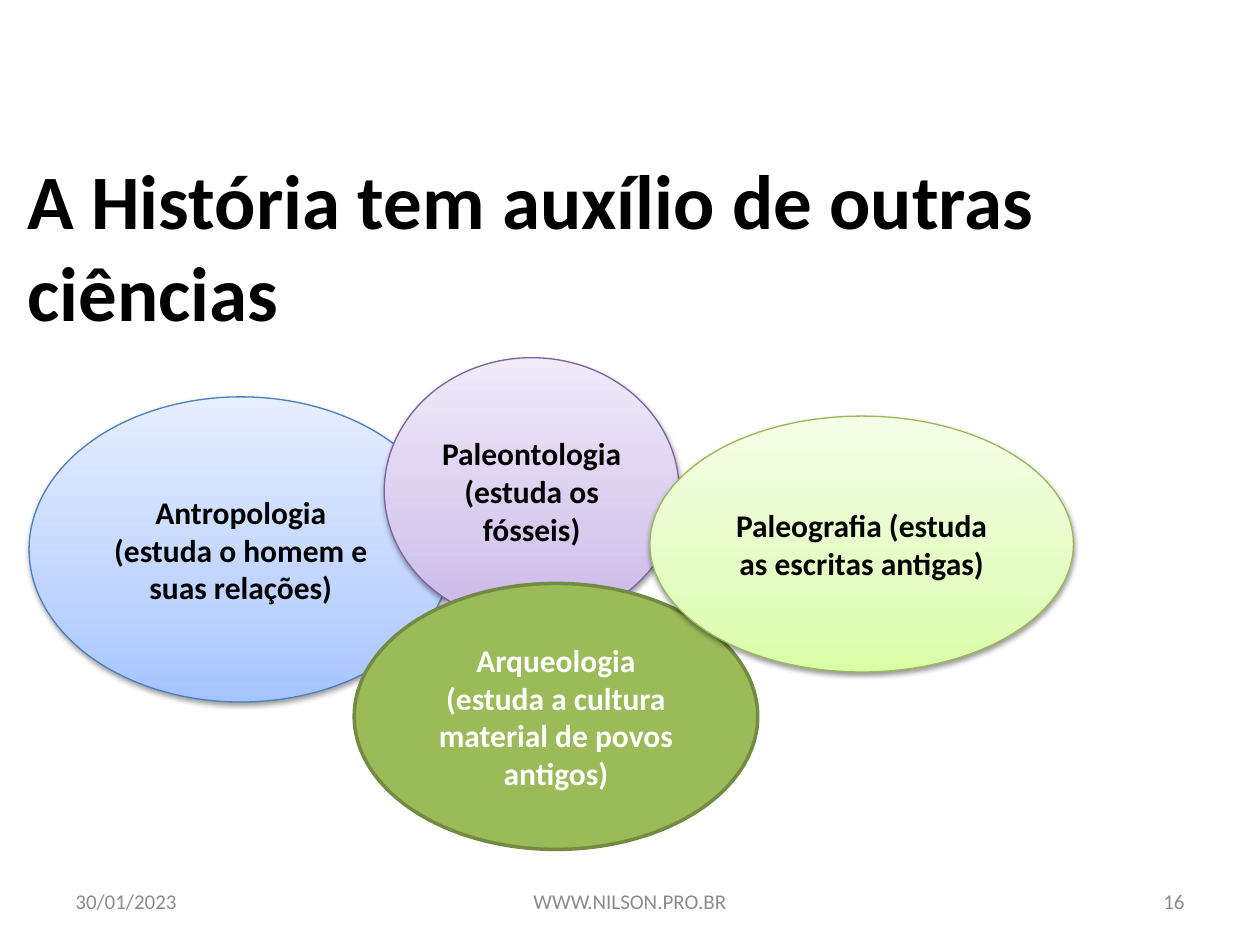
import pptx
import pptx.dml.color
import pptx.enum.shapes
import pptx.enum.text
import pptx.oxml
import pptx.oxml.ns
import pptx.util
from dataclasses import dataclass

Pt = pptx.util.Pt
Align = pptx.enum.text.PP_ALIGN
color = pptx.dml.color.RGBColor.from_string


@dataclass(frozen=True)
class Theme:
    font: str = "Calibri"
    title_size: int = 44
    body_size: int = 18
    footer_size: int = 12
    dark: str = "000000"
    light: str = "FFFFFF"
    muted: str = "8C8C8C"
    blue: tuple = ("A4C4FF", "BFD4FF", "E6EEFF")
    purple: tuple = ("C9B5E8", "D8CBEE", "F0EAF9")
    lime: tuple = ("DAFDA7", "E4FCC2", "F5FFE7")
    green: str = "9BBB59"
    blue_line: str = "4B7EBC"
    purple_line: str = "7D60A0"
    lime_line: str = "98B955"
    green_line: str = "738A42"


theme = Theme()


def write_text(shape, text, *, size, fill, bold=False, align=Align.LEFT):
    frame = shape.text_frame
    frame.word_wrap = True
    frame.vertical_anchor = pptx.enum.text.MSO_ANCHOR.MIDDLE
    paragraph = frame.paragraphs[0]
    paragraph.text = text
    paragraph.alignment = align
    font = paragraph.font
    font.name, font.size, font.bold = theme.font, Pt(size), bold
    font.color.rgb = color(fill)


def add_glow_and_gradient(shape, colors):
    """Fill upwards through three colours and cast a soft shadow below."""
    namespace = pptx.oxml.ns.nsdecls("a")
    stops = "".join(
        f'<a:gs pos="{position}"><a:srgbClr val="{value}"/></a:gs>'
        for position, value in zip((0, 35000, 100000), colors)
    )
    gradient = pptx.oxml.parse_xml(
        f'<a:gradFill {namespace} rotWithShape="1"><a:gsLst>{stops}</a:gsLst>'
        '<a:lin ang="16200000" scaled="0"/></a:gradFill>'
    )
    shadow = pptx.oxml.parse_xml(
        f'<a:outerShdw {namespace} blurRad="{Pt(3.1)}" dist="{Pt(1.6)}" dir="5400000" '
        'rotWithShape="0"><a:srgbClr val="000000"><a:alpha val="38000"/></a:srgbClr></a:outerShdw>'
    )
    properties = shape.element.spPr
    properties.find(pptx.oxml.ns.qn("a:prstGeom")).addnext(gradient)
    properties.find(pptx.oxml.ns.qn("a:effectLst")).append(shadow)


presentation = pptx.Presentation()
presentation.slide_width, presentation.slide_height = Pt(720), Pt(540)
slide = presentation.slides.add_slide(presentation.slide_layouts[6])

title = slide.shapes.add_textbox(Pt(8.64), Pt(95), Pt(656), Pt(90))
write_text(title, "A História tem auxílio de outras ciências",
           size=theme.title_size, fill=theme.dark, bold=True)

# Overlapping ellipses, from back to front
sciences = [
    ("Antropologia (estuda o homem e suas relações)",
     (16.6, 226.8, 242, 174.4), theme.blue, theme.blue_line),
    ("Paleontologia (estuda os fósseis)",
     (219.6, 204.4, 168.5, 152), theme.purple, theme.purple_line),
    ("Arqueologia (estuda a cultura material de povos antigos)",
     (202.4, 333.4, 230.6, 152), theme.green, theme.green_line),
    ("Paleografia (estuda as escritas antigas)",
     (371.4, 237.8, 242, 146.2), theme.lime, theme.lime_line),
]
for text, box, fill, line in sciences:
    ellipse = slide.shapes.add_shape(
        pptx.enum.shapes.MSO_SHAPE.OVAL, *(Pt(length) for length in box))
    ellipse.shadow.inherit = False
    ellipse.line.color.rgb = color(line)
    solid = isinstance(fill, str)
    ellipse.line.width = Pt(2 if solid else 0.75)
    if solid:
        ellipse.fill.solid()
        ellipse.fill.fore_color.rgb = color(fill)
    else:
        add_glow_and_gradient(ellipse, fill)
    write_text(ellipse, text, size=theme.body_size, bold=True, align=Align.CENTER,
               fill=theme.light if solid else theme.dark)

footer = [
    ("30/01/2023", 36, 168, Align.LEFT),
    ("WWW.NILSON.PRO.BR", 246, 228, Align.CENTER),
    ("16", 516, 168, Align.RIGHT),
]
for text, left, width, align in footer:
    box = slide.shapes.add_textbox(Pt(left), Pt(500.5), Pt(width), Pt(28.75))
    write_text(box, text, size=theme.footer_size, fill=theme.muted, align=align)

presentation.save("out.pptx")
